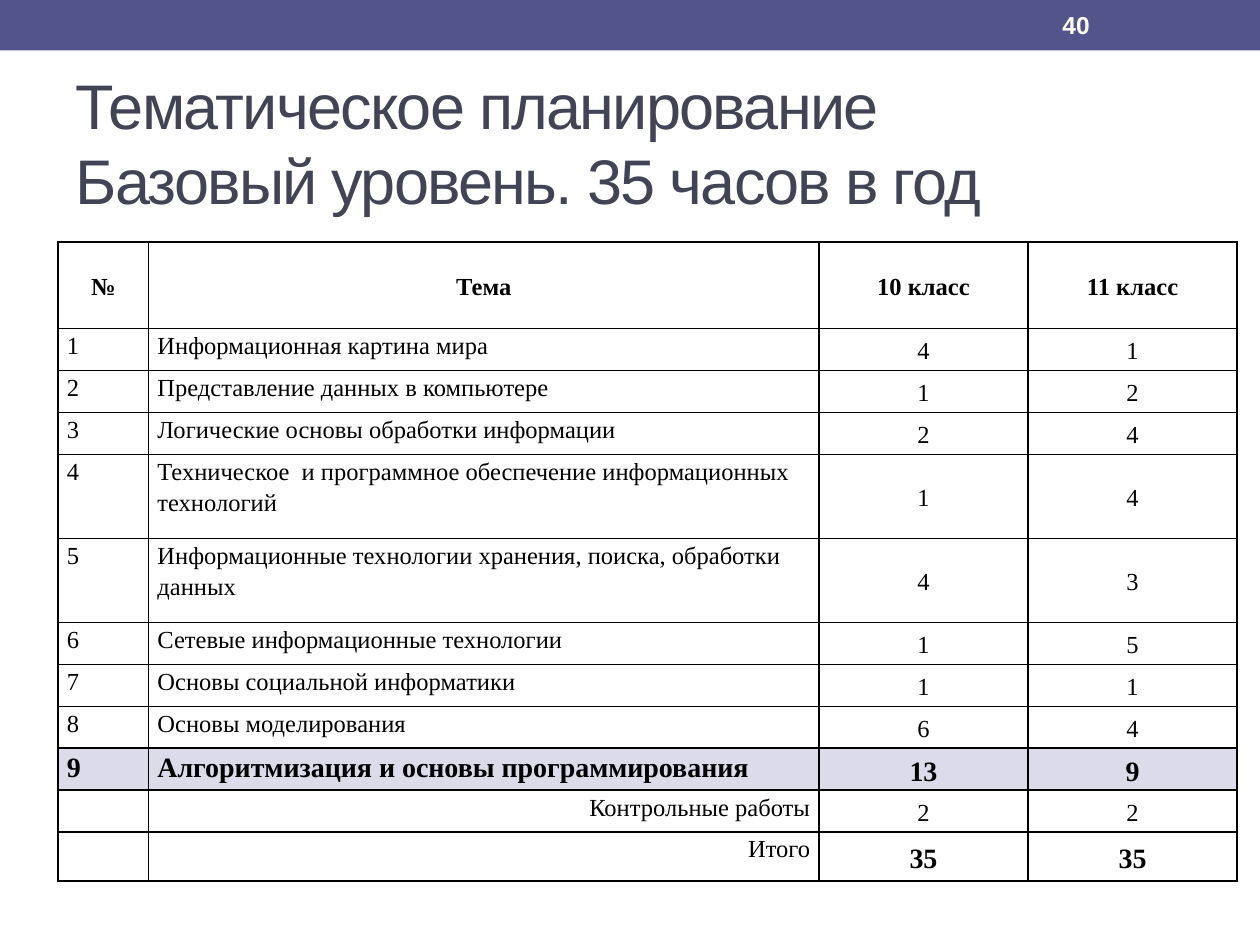
from lxml.etree import SubElement
from pptx import Presentation
from pptx.dml.color import RGBColor
from pptx.enum.shapes import MSO_SHAPE as Shape
from pptx.enum.text import MSO_ANCHOR as Anchor, MSO_AUTO_SIZE as AutoSize, PP_ALIGN as Align
from pptx.oxml.ns import qn
from pptx.util import Pt

COLORS = {"band": "53548A", "title": "424456", "text": "000000",
          "white": "FFFFFF", "highlight": "DBDBE9", "border": "000000"}
HEADING_FONT, TABLE_FONT = "Arial", "Times New Roman"

HEADER = ("№", "Тема", "10 класс", "11 класс")
TOPICS = [
    ("1", "Информационная картина мира", "4", "1"),
    ("2", "Представление данных в компьютере", "1", "2"),
    ("3", "Логические основы обработки информации", "2", "4"),
    ("4", "Техническое  и программное обеспечение информационных технологий", "1", "4"),
    ("5", "Информационные технологии хранения, поиска, обработки данных", "4", "3"),
    ("6", "Сетевые информационные технологии", "1", "5"),
    ("7", "Основы социальной информатики", "1", "1"),
    ("8", "Основы моделирования", "6", "4"),
    ("9", "Алгоритмизация и основы программирования", "13", "9"),
]
SUMMARY = [("", "Контрольные работы", "2", "2"), ("", "Итого", "35", "35")]
ROWS = [HEADER, *TOPICS, *SUMMARY]
HIGHLIGHT_ROW, TOTAL_ROW = len(TOPICS), len(ROWS) - 1
COLUMN_WIDTHS = (51.8, 383, 119.5, 119.5)
ROW_HEIGHTS = (49.5, 24, 24, 24, 48, 48, 24, 24, 24, 24, 24, 28)


def color(name):
    return RGBColor.from_string(COLORS[name])


def format_runs(paragraph, font, size, color_name, bold=False):
    for run in paragraph.runs:
        run.font.name = font
        run.font.size = Pt(size)
        run.font.bold = bold
        run.font.color.rgb = color(color_name)


def add_top_band(slide, left, top, width, height):
    band = slide.shapes.add_shape(Shape.RECTANGLE, Pt(left), Pt(top), Pt(width), Pt(height))
    band.shadow.inherit = False
    band.fill.solid()
    band.fill.fore_color.rgb = color("band")
    band.line.fill.background()

    # Page number inside the band
    page_number = slide.shapes.add_textbox(Pt(left + 600), Pt(top + 1.4), Pt(84), Pt(height - 2.8))
    frame = page_number.text_frame
    frame.word_wrap = True
    frame.vertical_anchor = Anchor.MIDDLE
    frame.text = "40"
    format_runs(frame.paragraphs[0], HEADING_FONT, 14, "white", bold=True)


def place_title(slide, left, top, width, height):
    title = slide.shapes.title
    title.left, title.top, title.width, title.height = Pt(left), Pt(top), Pt(width), Pt(height)
    frame = title.text_frame
    frame.text = "Тематическое планирование\vБазовый уровень. 35 часов в год"
    frame.auto_size = AutoSize.NONE
    frame.vertical_anchor = Anchor.MIDDLE
    heading = frame.paragraphs[0]
    heading.alignment = Align.LEFT
    format_runs(heading, HEADING_FONT, 36, "title")
    for run in heading.runs:
        run.font._element.set("spc", "-100")


def add_borders(cell, width=1):
    properties = cell._tc.get_or_add_tcPr()
    for position, side in enumerate(("a:lnL", "a:lnR", "a:lnT", "a:lnB")):
        line = SubElement(properties, qn(side), w=str(Pt(width)))
        properties.insert(position, line)
        fill = SubElement(line, qn("a:solidFill"))
        SubElement(fill, qn("a:srgbClr"), val=COLORS["border"])


def fill_cell(cell, text, row, column):
    is_header, is_hours = row == 0, column >= 2
    is_large = row == HIGHLIGHT_ROW or (row == TOTAL_ROW and is_hours)

    cell.margin_left = cell.margin_right = Pt(5)
    cell.margin_top = cell.margin_bottom = Pt(0)
    cell.vertical_anchor = Anchor.MIDDLE if is_header or is_hours else Anchor.TOP
    if row == HIGHLIGHT_ROW:
        cell.fill.solid()
        cell.fill.fore_color.rgb = color("highlight")
    else:
        cell.fill.background()
    add_borders(cell)
    if not text:
        return

    cell.text_frame.text = text
    paragraph = cell.text_frame.paragraphs[0]
    paragraph.line_spacing = 1.15
    if is_header or is_hours:
        paragraph.alignment = Align.CENTER
    else:
        paragraph.alignment = Align.RIGHT if row > HIGHLIGHT_ROW else Align.LEFT
    if is_header and is_hours:
        paragraph.space_after = Pt(6)
    format_runs(paragraph, TABLE_FONT, 16 if is_large else 14, "text", is_header or is_large)


def add_plan_table(slide, left, top, width, height):
    plan = slide.shapes.add_table(len(ROWS), len(HEADER), Pt(left), Pt(top),
                                  Pt(width), Pt(height)).table
    plan.first_row = plan.horz_banding = False
    for column, column_width in zip(plan.columns, COLUMN_WIDTHS):
        column.width = Pt(column_width)
    for row, row_height in zip(plan.rows, ROW_HEIGHTS):
        row.height = Pt(row_height)
    for row, texts in enumerate(ROWS):
        for column, text in enumerate(texts):
            fill_cell(plan.cell(row, column), text, row, column)


def main():
    presentation = Presentation()
    presentation.slide_width, presentation.slide_height = Pt(720), Pt(540)
    slide = presentation.slides.add_slide(presentation.slide_layouts[5])

    add_top_band(slide, 0, 0, 720, 28.8)
    place_title(slide, 36, 42, 648, 78)
    add_plan_table(slide, 33.2, 138.2, sum(COLUMN_WIDTHS), sum(ROW_HEIGHTS))

    presentation.save("out.pptx")


if __name__ == "__main__":
    main()
